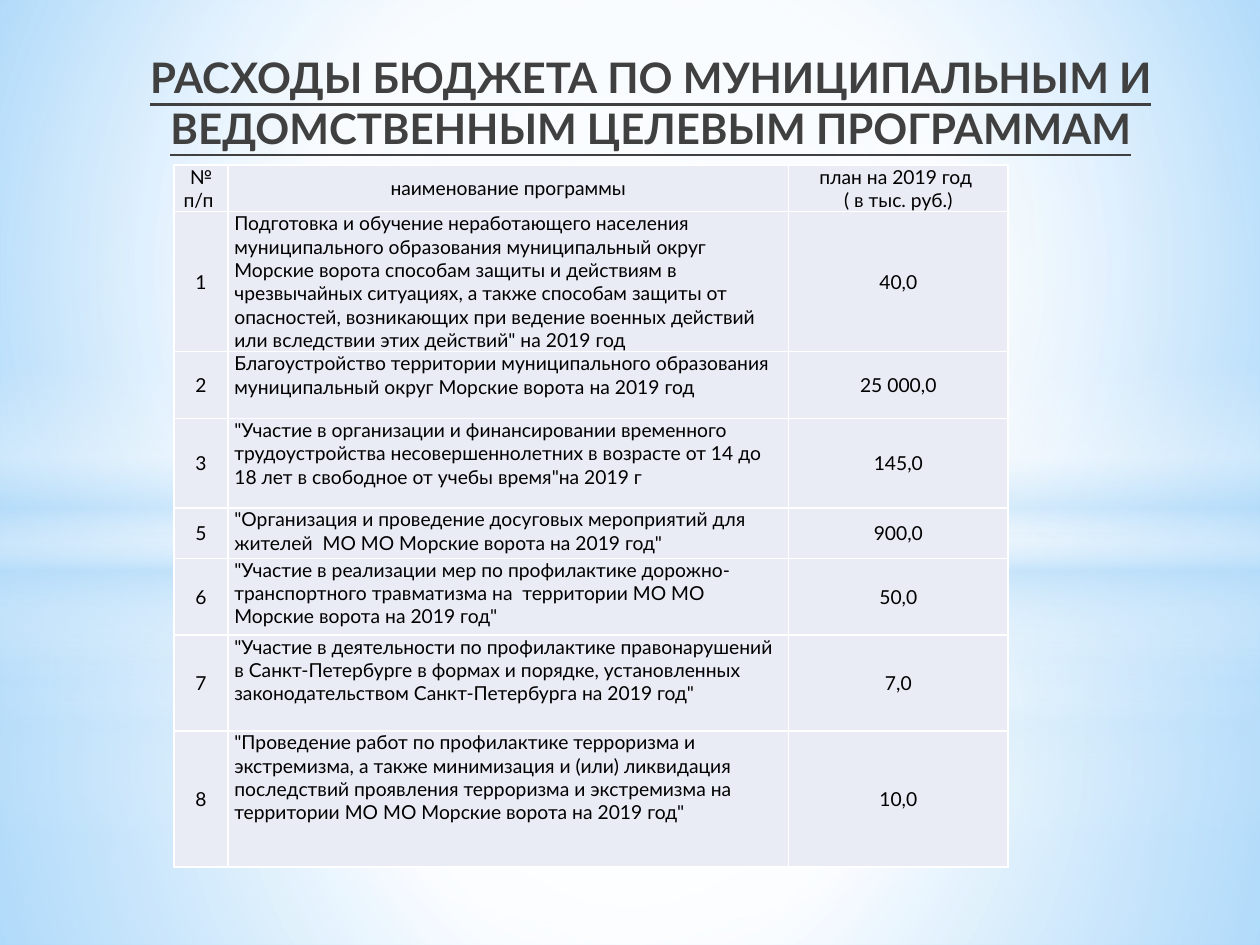
from lxml import etree
from pptx import Presentation
from pptx.dml.color import RGBColor
from pptx.enum.shapes import MSO_SHAPE
from pptx.enum.text import MSO_ANCHOR, MSO_AUTO_SIZE, PP_ALIGN
from pptx.oxml import parse_xml
from pptx.oxml.ns import nsdecls, qn
from pptx.util import Inches, Pt

RECT, OVAL = MSO_SHAPE.RECTANGLE, MSO_SHAPE.OVAL
CENTER, LEFT = PP_ALIGN.CENTER, PP_ALIGN.LEFT
MIDDLE, TOP, BOTTOM = MSO_ANCHOR.MIDDLE, MSO_ANCHOR.TOP, MSO_ANCHOR.BOTTOM
FONT = "Lato"
C = {"white": "FFFFFF", "haze": "B4DCFA", "sky": "9ED5FF", "blue": "5BB9FF",
     "cell": "E9EBF5", "title": "404040", "text": "000000"}


def set_gradient(parent, stops, focus=None):
    """Swap the empty fill of parent for a gradient: radial with a focus, else vertical."""
    grad = etree.Element(qn("a:gradFill"), rotWithShape="1")
    lst = etree.SubElement(grad, qn("a:gsLst"))
    for pos, color, alpha in stops:
        gs = etree.SubElement(lst, qn("a:gs"), pos=str(pos * 1000))
        clr = etree.SubElement(gs, qn("a:srgbClr"), val=C[color])
        if alpha < 100:
            etree.SubElement(clr, qn("a:alpha"), val=str(alpha * 1000))
    if focus:
        radial = etree.SubElement(grad, qn("a:path"), path="circle")
        sides = {k: str(v * 1000) for k, v in zip("ltrb", focus)}
        etree.SubElement(radial, qn("a:fillToRect"), **sides)
    else:
        etree.SubElement(grad, qn("a:lin"), ang="5400000", scaled="0")
    parent.replace(parent.find(qn("a:noFill")), grad)


prs = Presentation()
prs.slide_width, prs.slide_height = Inches(10), Inches(7.5)
s = prs.slides.add_slide(prs.slide_layouts[5])

# Background
s.background.fill.background()
set_gradient(s._element.find(".//" + qn("p:bgPr")),
             [(0, "sky", 100), (60, "white", 100), (100, "blue", 100)], (20, 10, 20, 60))

# Sky, water and horizon: two layers of the same four parts
MID = (50, 50, 50, 50)
BAND = [(0, "white", 0), (29, "white", 30), (45, "haze", 40),
        (55, "white", 26), (65, "haze", 60), (100, "white", 0)]
for horizon, band_top, shift, glow in ((5.58, 4.12, 0, 56), (4.23, 2.9, 1, 54)):
    water = [(0, "white", 91 + shift), (37, "white", 76 + shift), (100, "haze", 79 + shift)]
    sky = [(0, "white", 89 + shift), (48, "white", 62 + shift), (100, "haze", 79 + shift)]
    for kind, top, height, stops, focus in (
            (RECT, horizon, 7.5 - horizon, water, MID),
            (RECT, 0, horizon, sky, MID),
            (RECT, band_top, 2.5, BAND, None),
            (OVAL, 1.75, 5.58, [(0, "white", 100), (glow, "white", 0)], MID)):
        sp = s.shapes.add_shape(kind, 0, Inches(top), prs.slide_width, Inches(height))
        sp.shadow.inherit = False
        sp.line.fill.background()
        sp.fill.background()
        set_gradient(sp._element.spPr, stops, focus)

# Title, brought in front of the backdrop
title = s.shapes.title
s.shapes._spTree.append(title._element)
title.left, title.top, title.width, title.height = map(Inches, (0.34, 0.99, 9.65, 1.02))
tf = title.text_frame
tf.text = "РАСХОДЫ БЮДЖЕТА ПО МУНИЦИПАЛЬНЫМ И ВЕДОМСТВЕННЫМ ЦЕЛЕВЫМ ПРОГРАММАМ"
tf.auto_size = MSO_AUTO_SIZE.NONE
tf.vertical_anchor = BOTTOM
tf.margin_bottom = Inches(0.8)
p = tf.paragraphs[0]
p.alignment = CENTER
p.font.name, p.font.size = FONT, Pt(24)
p.font.bold = p.font.underline = True
p.font.color.rgb = RGBColor.from_string(C["title"])

# Programme table
ROWS = [
    ("№ п/п ", "наименование программы", "план на 2019 год \n( в тыс. руб.)"),
    ("1", "Подготовка и обучение неработающего населения муниципального образования "
          "муниципальный округ Морские ворота способам защиты и действиям в чрезвычайных "
          "ситуациях, а также способам защиты от опасностей, возникающих при ведение военных "
          "действий или вследствии этих действий\" на 2019 год", "40,0"),
    ("2", "Благоустройство территории муниципального образования муниципальный округ "
          "Морские ворота на 2019 год", "25 000,0"),
    ("3", "\"Участие в организации и финансировании временного трудоустройства "
          "несовершеннолетних в возрасте от 14 до 18 лет в свободное от учебы "
          "время\"на 2019 г", "145,0"),
    ("5", "\"Организация и проведение досуговых мероприятий для жителей  МО МО "
          "Морские ворота на 2019 год\"", "900,0"),
    ("6", "\"Участие в реализации мер по профилактике дорожно-транспортного травматизма "
          "на  территории МО МО Морские ворота на 2019 год\"", "50,0"),
    ("7", "\"Участие в деятельности по профилактике правонарушений в Санкт-Петербурге "
          "в формах и порядке, установленных законодательством Санкт-Петербурга "
          "на 2019 год\"", "7,0"),
    ("8", "\"Проведение работ по профилактике терроризма и экстремизма, а также минимизация "
          "и (или) ликвидация последствий проявления терроризма и экстремизма на территории "
          "МО МО Морские ворота на 2019 год\"", "10,0"),
]
WIDTHS = (0.43, 4.45, 1.74)
HEIGHTS = (0.35, 1.07, 0.53, 0.71, 0.4, 0.61, 0.76, 1.08)
table = s.shapes.add_table(len(ROWS), len(WIDTHS), Inches(1.38), Inches(1.31),
                           Inches(sum(WIDTHS)), Inches(sum(HEIGHTS))).table
table.first_row = table.horz_banding = False
for col, width in zip(table.columns, WIDTHS):
    col.width = Inches(width)
for i, (row, height) in enumerate(zip(ROWS, HEIGHTS)):
    table.rows[i].height = Inches(height)
    for j, text in enumerate(row):
        cell = table.cell(i, j)
        is_name = i > 0 and j == 1
        cell.text = text
        cell.margin_left = cell.margin_right = Inches(0.05)
        cell.margin_top = cell.margin_bottom = 0
        cell.vertical_anchor = TOP if is_name else MIDDLE
        for side in ("lnL", "lnR", "lnT", "lnB"):
            cell._tc.tcPr.append(parse_xml(
                f'<a:{side} {nsdecls("a")} w="12700"><a:solidFill>'
                f'<a:srgbClr val="{C["white"]}"/></a:solidFill></a:{side}>'))
        cell.fill.solid()
        cell.fill.fore_color.rgb = RGBColor.from_string(C["cell"])
        for p in cell.text_frame.paragraphs:
            p.alignment = LEFT if is_name else CENTER
            p.font.name, p.font.size = FONT, Pt(11)
            p.font.color.rgb = RGBColor.from_string(C["text"])

prs.save("out.pptx")
